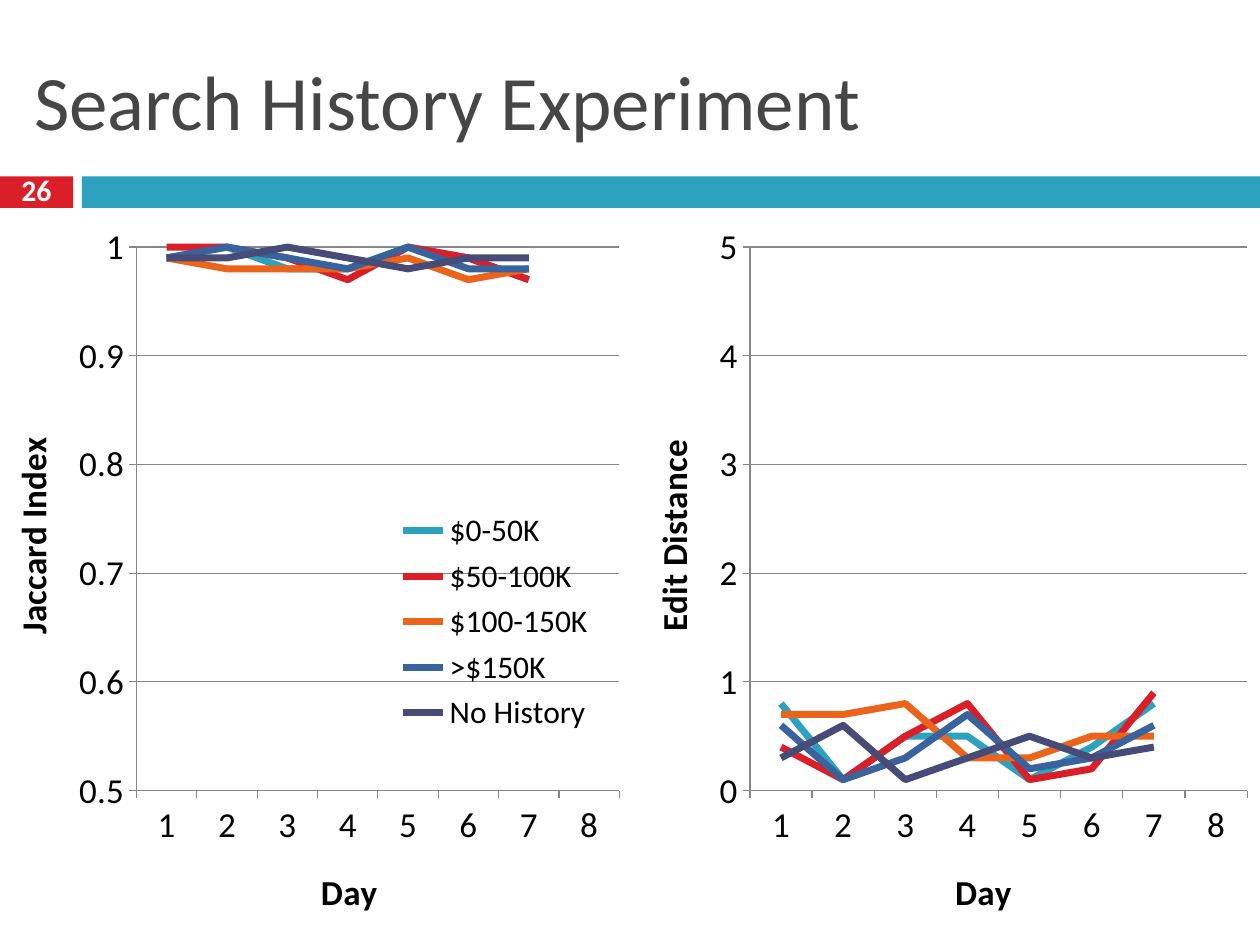
from typing import NamedTuple, Optional

from lxml import etree
from pptx import Presentation
from pptx.chart.data import CategoryChartData
from pptx.dml.color import RGBColor
from pptx.enum.chart import XL_CHART_TYPE, XL_LEGEND_POSITION, XL_TICK_MARK
from pptx.enum.shapes import MSO_SHAPE
from pptx.enum.text import MSO_ANCHOR, PP_ALIGN
from pptx.oxml.ns import qn
from pptx.util import Inches, Pt

LINE = XL_CHART_TYPE.LINE
LEGEND_RIGHT = XL_LEGEND_POSITION.RIGHT
TICK_OUTSIDE, TICK_NONE = XL_TICK_MARK.OUTSIDE, XL_TICK_MARK.NONE
RECTANGLE = MSO_SHAPE.RECTANGLE
MIDDLE = MSO_ANCHOR.MIDDLE
LEFT, CENTER = PP_ALIGN.LEFT, PP_ALIGN.CENTER

FONT = "Calibri"
BLACK = RGBColor(0x00, 0x00, 0x00)
WHITE = RGBColor(0xFF, 0xFF, 0xFF)
TITLE_GRAY = RGBColor(0x46, 0x46, 0x46)
AXIS_GRAY = RGBColor(0x86, 0x86, 0x86)
TEAL = RGBColor(0x2D, 0xA2, 0xBF)
RED = RGBColor(0xDA, 0x1F, 0x28)
ORANGE = RGBColor(0xEB, 0x64, 0x1B)
BLUE = RGBColor(0x39, 0x63, 0x9D)
INDIGO = RGBColor(0x47, 0x4B, 0x78)
SERIES_COLORS = (TEAL, RED, ORANGE, BLUE, INDIGO)
DAYS = [str(day) for day in range(1, 9)]


class Area(NamedTuple):
    """Left, top, width and height: inches on a slide, fractions in a chart."""
    left: float
    top: float
    width: float
    height: float

    def lengths(self) -> list:
        return [Inches(value) for value in self]


class Bar(NamedTuple):
    area: Area
    color: RGBColor


class LineChart(NamedTuple):
    area: Area
    plot: Area
    value_title: str
    minimum: float
    maximum: float
    step: float
    series: dict
    legend: Optional[Area] = None


BARS = (
    Bar(Area(0, 1.4, 0.58, 0.25), RED),
    Bar(Area(0.65, 1.4, 9.35, 0.25), TEAL),
)

CHARTS = (
    LineChart(
        Area(4.94, 1.67, 5.06, 5.83), Area(0.2, 0.05, 0.78, 0.74),
        "Edit Distance", 0, 5, 1,
        {
            "Series 1": (0.8, 0.1, 0.5, 0.5, 0.1, 0.4, 0.8),
            "Series 2": (0.4, 0.1, 0.5, 0.8, 0.1, 0.2, 0.9),
            "Series 3": (0.7, 0.7, 0.8, 0.3, 0.3, 0.5, 0.5),
            "Series 4": (0.6, 0.1, 0.3, 0.7, 0.2, 0.3, 0.6),
            "Series 5": (0.3, 0.6, 0.1, 0.3, 0.5, 0.3, 0.4),
        },
    ),
    LineChart(
        Area(-0.16, 1.67, 5.18, 5.83), Area(0.24, 0.05, 0.74, 0.74),
        "Jaccard Index", 0.5, 1, 0.1,
        {
            "$0-50K": (0.99, 1, 0.98, 0.98, 1, 0.99, 0.97),
            "$50-100K": (1, 1, 0.99, 0.97, 1, 0.99, 0.97),
            "$100-150K": (0.99, 0.98, 0.98, 0.98, 0.99, 0.97, 0.98),
            ">$150K": (0.99, 1, 0.99, 0.98, 1, 0.98, 0.98),
            "No History": (0.99, 0.99, 1, 0.99, 0.98, 0.99, 0.99),
        },
        legend=Area(0.63, 0.4, 0.32, 0.32),
    ),
)


def format_font(font, size: float, color: RGBColor = BLACK, bold: bool = False) -> None:
    font.name, font.size, font.bold = FONT, Pt(size), bold
    font.color.rgb = color


def write_text(frame, text: str, *, size: float, color: RGBColor = BLACK,
               bold: bool = False, align=None, spacing: Optional[float] = None) -> None:
    paragraph = frame.paragraphs[0]
    paragraph.alignment = align
    paragraph.line_spacing = spacing
    run = paragraph.add_run()
    run.text = text
    format_font(run.font, size, color, bold)


def place(shape, area: Area) -> None:
    shape.left, shape.top, shape.width, shape.height = area.lengths()


def add_bar(slide, bar: Bar) -> None:
    shape = slide.shapes.add_shape(RECTANGLE, *bar.area.lengths())
    shape.shadow.inherit = False
    shape.fill.solid()
    shape.fill.fore_color.rgb = bar.color
    shape.line.fill.background()


def set_layout(parent, area: Area, position: int, inner: bool = False) -> None:
    """Fix the place of a plot area or legend as fractions of its chart."""
    for old in parent.findall(qn("c:layout")):
        parent.remove(old)
    layout = etree.Element(qn("c:layout"))
    manual = etree.SubElement(layout, qn("c:manualLayout"))
    settings = [("layoutTarget", "inner")] if inner else []
    settings += [("xMode", "edge"), ("yMode", "edge")]
    settings += zip("xywh", area)
    for name, value in settings:
        etree.SubElement(manual, qn(f"c:{name}")).set("val", str(value))
    parent.insert(position, layout)


def format_axis(axis, title: str) -> None:
    write_text(axis.axis_title.text_frame, title, size=20, bold=True)
    axis.major_tick_mark, axis.minor_tick_mark = TICK_OUTSIDE, TICK_NONE
    format_font(axis.tick_labels.font, 20)
    format_line(axis.format.line, AXIS_GRAY, 0.75)


def format_line(line, color: RGBColor, width: float) -> None:
    line.color.rgb = color
    line.width = Pt(width)


def add_line_chart(slide, content: LineChart) -> None:
    data = CategoryChartData()
    data.categories = DAYS
    for name, values in content.series.items():
        data.add_series(name, (*values, None))
    chart = slide.shapes.add_chart(LINE, *content.area.lengths(), data).chart
    chart.has_title = False
    format_font(chart.font, 10)
    chart.plots[0].vary_by_categories = False
    for series, color in zip(chart.plots[0].series, SERIES_COLORS):
        series.smooth = False
        format_line(series.format.line, color, 4)

    format_axis(chart.category_axis, "Day")
    axis = chart.value_axis
    format_axis(axis, content.value_title)
    axis.minimum_scale, axis.maximum_scale = content.minimum, content.maximum
    axis.major_unit = content.step
    axis.has_major_gridlines = True
    format_line(axis.major_gridlines.format.line, AXIS_GRAY, 0.75)
    set_layout(chart.element.find(".//" + qn("c:plotArea")), content.plot, 0, inner=True)

    chart.has_legend = content.legend is not None
    if content.legend:
        chart.legend.position = LEGEND_RIGHT
        chart.legend.include_in_layout = True
        format_font(chart.legend.font, 18)
        set_layout(chart.element.find(".//" + qn("c:legend")), content.legend, 1)


def main() -> None:
    presentation = Presentation()
    presentation.slide_width, presentation.slide_height = Inches(10), Inches(7.5)
    slide = presentation.slides.add_slide(presentation.slide_layouts[5])

    for bar in BARS:
        add_bar(slide, bar)

    title = slide.shapes.title
    place(title, Area(0.17, 0.25, 9.67, 1.08))
    title.text_frame.vertical_anchor = MIDDLE
    write_text(title.text_frame, "Search History Experiment", size=44,
               color=TITLE_GRAY, align=LEFT)

    number = slide.shapes.add_textbox(*Area(0, 1.37, 0.58, 0.33).lengths())
    number.text_frame.word_wrap = True
    number.text_frame.vertical_anchor = MIDDLE
    write_text(number.text_frame, "26", size=17, color=WHITE, bold=True,
               align=CENTER, spacing=0.8)

    for content in CHARTS:
        add_line_chart(slide, content)
    presentation.save("out.pptx")


if __name__ == "__main__":
    main()
